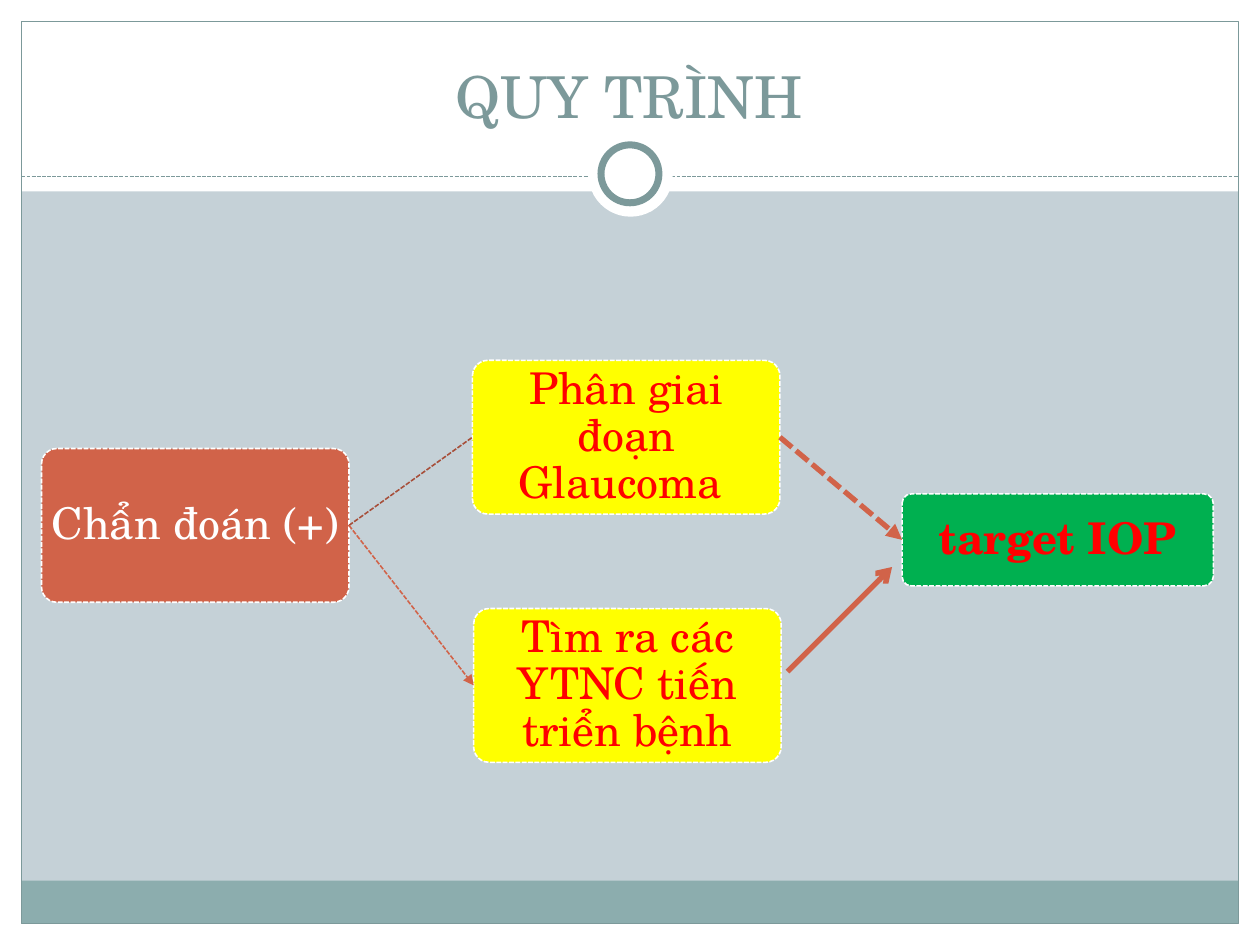
from dataclasses import dataclass

from lxml import etree
from pptx import Presentation
from pptx.dml.color import RGBColor
from pptx.enum.dml import MSO_LINE
from pptx.enum.shapes import MSO_CONNECTOR, MSO_SHAPE
from pptx.enum.text import MSO_ANCHOR, MSO_AUTO_SIZE, PP_ALIGN
from pptx.oxml.ns import qn
from pptx.util import Inches, Pt

RECTANGLE = MSO_SHAPE.RECTANGLE
ROUNDED = MSO_SHAPE.ROUNDED_RECTANGLE
OVAL = MSO_SHAPE.OVAL
STRAIGHT = MSO_CONNECTOR.STRAIGHT
DASHED = MSO_LINE.SQUARE_DOT
CENTER = PP_ALIGN.CENTER
MIDDLE = MSO_ANCHOR.MIDDLE
BOTTOM = MSO_ANCHOR.BOTTOM
NO_AUTOFIT = MSO_AUTO_SIZE.NONE
LEFT_SIDE, RIGHT_SIDE = 1, 3


@dataclass(frozen=True)
class Theme:
    font: str = "TeX Gyre Schola"
    title_size: int = 33
    body_size: int = 25
    background: str = "C5D1D7"
    white: str = "FFFFFF"
    frame: str = "7C999A"
    footer: str = "8CADAE"
    accent: str = "D16349"
    dark_accent: str = "A74F3A"
    yellow: str = "FFFF00"
    green: str = "00B050"
    red: str = "FF0000"
    thin: float = 0.9
    thick: float = 3
    frame_width: float = 0.75
    ring_width: float = 4


class SlideBuilder:
    def __init__(self, slide, theme):
        self.slide = slide
        self.theme = theme

    def background(self):
        fill = self.slide.background.fill
        fill.solid()
        fill.fore_color.rgb = RGBColor.from_string(self.theme.background)

    def stroke(self, line, color, width, dash=None):
        line.color.rgb = RGBColor.from_string(color)
        line.width = Pt(width)
        if dash is not None:
            line.dash_style = dash

    def shape(self, kind, left, top, width, height, fill=None):
        shape = self.slide.shapes.add_shape(
            kind, Inches(left), Inches(top), Inches(width), Inches(height)
        )
        shape.shadow.inherit = False
        shape.line.fill.background()
        if fill:
            shape.fill.solid()
            shape.fill.fore_color.rgb = RGBColor.from_string(fill)
        else:
            shape.fill.background()
        return shape

    def text(self, shape, words, size, color, anchor, bold=False):
        frame = shape.text_frame
        frame.word_wrap = True
        frame.auto_size = NO_AUTOFIT
        frame.vertical_anchor = anchor
        para = frame.paragraphs[0]
        para.alignment = CENTER
        span = para.add_run()
        span.text = words
        span.font.name = self.theme.font
        span.font.size = Pt(size)
        span.font.bold = bold
        span.font.color.rgb = RGBColor.from_string(color)
        return frame

    def title(self, words, left, top, width, height):
        title = self.slide.shapes.title
        title.left, title.top = Inches(left), Inches(top)
        title.width, title.height = Inches(width), Inches(height)
        self.text(title, words, self.theme.title_size, self.theme.frame, BOTTOM)
        self.slide.shapes._spTree.append(title._element)

    def box(self, words, left, top, width, height, fill, color, bold=False):
        box = self.shape(ROUNDED, left, top, width, height, fill)
        box.adjustments[0] = 0.1
        self.stroke(box.line, self.theme.white, self.theme.thin, DASHED)
        frame = self.text(box, words, self.theme.body_size, color, MIDDLE, bold)
        frame.margin_left = frame.margin_right = Inches(0.02)
        frame.margin_top = frame.margin_bottom = Inches(0.02)
        frame.paragraphs[0].line_spacing = 0.9
        return box

    def line(self, start, end, color, width, dash=None, head=None):
        points = [Inches(value) for value in (*start, *end)]
        line = self.slide.shapes.add_connector(STRAIGHT, *points)
        self.stroke(line.line, color, width, dash)
        if head:
            outline = line.line._get_or_add_ln()
            etree.SubElement(outline, qn("a:tailEnd"), type=head)
        etree.SubElement(line._element.spPr, qn("a:effectLst"))
        return line

    def link(self, source, target, color, width, head=None):
        line = self.line((0, 0), (1, 1), color, width, DASHED, head)
        line.begin_connect(source, RIGHT_SIDE)
        line.end_connect(target, LEFT_SIDE)


def draw_frame(page, theme):
    for area in (
        (0, 7.33, 10, 0.17),
        (0, 0, 10, 1.52),
        (0, 0, 0.17, 7.5),
        (9.83, 0, 0.17, 7.5),
    ):
        page.shape(RECTANGLE, *area, theme.white)
    page.shape(RECTANGLE, 0.17, 6.99, 9.66, 0.34, theme.footer)
    border = page.shape(RECTANGLE, 0.17, 0.17, 9.66, 7.16)
    page.stroke(border.line, theme.frame, theme.frame_width)
    page.line((0.17, 1.4), (9.83, 1.4), theme.frame, theme.frame_width, DASHED)
    page.shape(OVAL, 4.67, 1.05, 0.67, 0.67, theme.white)
    ring = page.shape(OVAL, 4.77, 1.15, 0.46, 0.46, theme.white)
    page.stroke(ring.line, theme.frame, theme.ring_width)


def draw_process(page, theme):
    step = (2.44, 1.22)
    diagnosis = page.box(
        "Chẩn đoán (+)", 0.33, 3.56, *step, theme.accent, theme.white
    )
    staging = page.box(
        "Phân giai đoạn Glaucoma ", 3.75, 2.86, *step, theme.yellow, theme.red
    )
    risks = page.box(
        "Tìm ra các YTNC tiến triển bệnh", 3.76, 4.83, *step, theme.yellow, theme.red
    )
    target = page.box(
        "target IOP", 7.16, 3.92, 2.47, 0.73, theme.green, theme.red, bold=True
    )
    page.link(diagnosis, staging, theme.dark_accent, theme.thin)
    page.link(diagnosis, risks, theme.accent, theme.thin, "triangle")
    page.link(staging, target, theme.accent, theme.thick, "triangle")
    page.line((6.25, 5.33), (7.08, 4.5), theme.accent, theme.thick, head="arrow")


def main():
    theme = Theme()
    deck = Presentation()
    deck.slide_width, deck.slide_height = Inches(10), Inches(7.5)
    page = SlideBuilder(deck.slides.add_slide(deck.slide_layouts[5]), theme)
    page.background()
    draw_frame(page, theme)
    page.title("QUY TRÌNH", 0.33, 0.25, 9.33, 0.83)
    draw_process(page, theme)
    deck.save("out.pptx")


if __name__ == "__main__":
    main()
